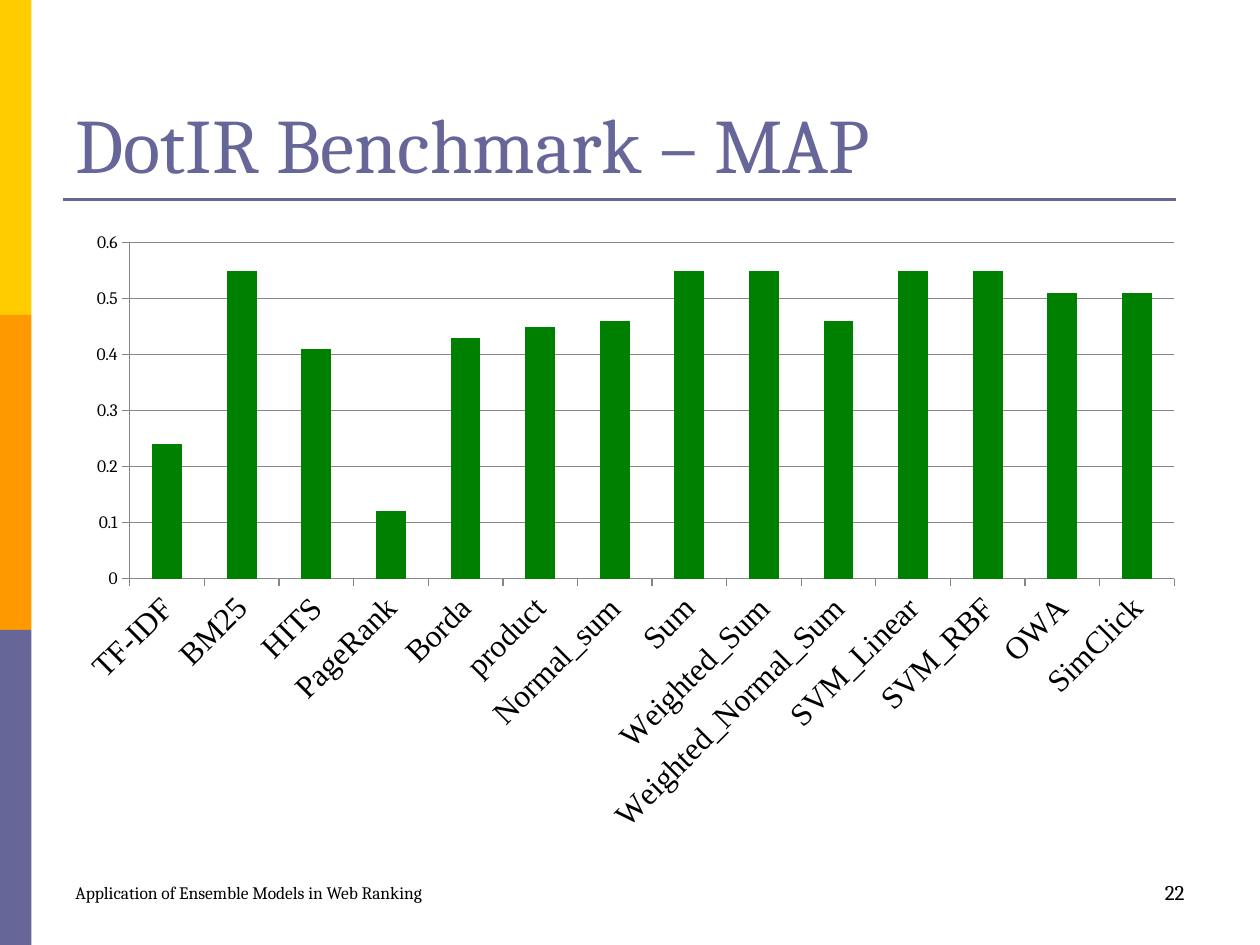
from lxml import etree
from pptx import Presentation
from pptx.chart.data import CategoryChartData
from pptx.dml.color import RGBColor
from pptx.enum.chart import XL_CHART_TYPE, XL_TICK_MARK
from pptx.enum.shapes import MSO_CONNECTOR, MSO_SHAPE
from pptx.enum.text import MSO_ANCHOR, PP_ALIGN
from pptx.oxml.ns import qn
from pptx.util import Inches, Pt

COLUMN = XL_CHART_TYPE.COLUMN_CLUSTERED
OUTSIDE = XL_TICK_MARK.OUTSIDE
RECT, LINE = MSO_SHAPE.RECTANGLE, MSO_CONNECTOR.STRAIGHT
BOTTOM, MIDDLE = MSO_ANCHOR.BOTTOM, MSO_ANCHOR.MIDDLE
LEFT, RIGHT = PP_ALIGN.LEFT, PP_ALIGN.RIGHT

TITLE = "DotIR Benchmark – MAP"
FOOTERS = [
    ("Application of Ensemble Models in Web Ranking", 0.5, 4.25, "foot", LEFT),
    ("22", 7.17, 2.33, "page", RIGHT),
]
SCORES = {
    "TF-IDF": 0.24,
    "BM25": 0.55,
    "HITS": 0.41,
    "PageRank": 0.12,
    "Borda": 0.43,
    "product": 0.45,
    "Normal_sum": 0.46,
    "Sum": 0.55,
    "Weighted_Sum": 0.55,
    "Weighted_Normal_Sum": 0.46,
    "SVM_Linear": 0.55,
    "SVM_RBF": 0.55,
    "OWA": 0.51,
    "SimClick": 0.51,
}
THEME = {
    "font": "Cambria",
    "label font": "Times New Roman",
    "bands": ["FFCC00", "FF9900", "666699"],
    "accent": "666699",
    "text": "000000",
    "bar": "008000",
    "grid": "868686",
    "size": {"title": 44, "foot": 10, "page": 12, "axis": 10, "label": 18},
}


def color(key):
    return RGBColor.from_string(THEME[key])


def style(font, size, tint="text", face="font"):
    font.name = THEME[face]
    font.size = Pt(THEME["size"][size])
    font.color.rgb = color(tint)
    font.bold = False


def write(shape, text, size, anchor, tint="text", align=LEFT):
    frame = shape.text_frame
    frame.word_wrap = True
    frame.vertical_anchor = anchor
    para = frame.paragraphs[0]
    para.text = text
    para.alignment = align
    style(para.font, size, tint)


def add_bands(shapes):
    tall = 7.5 / len(THEME["bands"])
    for i, tint in enumerate(THEME["bands"]):
        band = shapes.add_shape(RECT, 0, Inches(i * tall), Inches(0.25), Inches(tall))
        band.shadow.inherit = False
        band.fill.solid()
        band.fill.fore_color.rgb = RGBColor.from_string(tint)
        band.line.fill.background()


def add_rule(shapes):
    y = Inches(19 / 12)
    rule = shapes.add_connector(LINE, Inches(0.5), y, Inches(9.33), y)
    rule.line.color.rgb = color("accent")
    rule.line.width = Pt(1.5)
    etree.SubElement(rule._element.spPr, qn("a:effectLst"))


def add_title(shapes):
    title = shapes.title
    title.left, title.top = Inches(0.5), Inches(0.3)
    title.width, title.height = Inches(9), Inches(1.25)
    write(title, TITLE, "title", BOTTOM, "accent")


def add_scores(shapes):
    data = CategoryChartData()
    data.categories = list(SCORES)
    data.add_series("Series 1", list(SCORES.values()))
    chart = shapes.add_chart(
        COLUMN, Inches(0.5), Inches(1.75), Inches(9), Inches(4.96), data
    ).chart
    chart.has_legend = False
    chart.has_title = False
    style(chart.font, "axis")
    plot = chart.plots[0]
    plot.gap_width = 150
    plot.vary_by_categories = False
    fill = plot.series[0].format.fill
    fill.solid()
    fill.fore_color.rgb = color("bar")

    cats, vals = chart.category_axis, chart.value_axis
    vals.minimum_scale, vals.maximum_scale, vals.major_unit = 0, 0.6, 0.1
    vals.has_major_gridlines = True
    for line in (cats.format.line, vals.format.line, vals.major_gridlines.format.line):
        line.color.rgb = color("grid")
        line.width = Pt(0.75)
    for axis in (cats, vals):
        axis.major_tick_mark = OUTSIDE
    style(vals.tick_labels.font, "axis")
    style(cats.tick_labels.font, "label", face="label font")
    body = cats._element.find(qn("c:txPr")).find(qn("a:bodyPr"))
    body.set("rot", str(-45 * 60000))
    body.set("vert", "horz")


def main():
    deck = Presentation()
    deck.slide_width, deck.slide_height = Inches(10), Inches(7.5)
    shapes = deck.slides.add_slide(deck.slide_layouts[5]).shapes
    add_bands(shapes)
    add_rule(shapes)
    add_title(shapes)
    for text, left, wide, size, align in FOOTERS:
        box = shapes.add_textbox(Inches(left), Inches(6.83), Inches(wide), Inches(0.5))
        write(box, text, size, MIDDLE, align=align)
    add_scores(shapes)
    deck.save("out.pptx")


if __name__ == "__main__":
    main()
